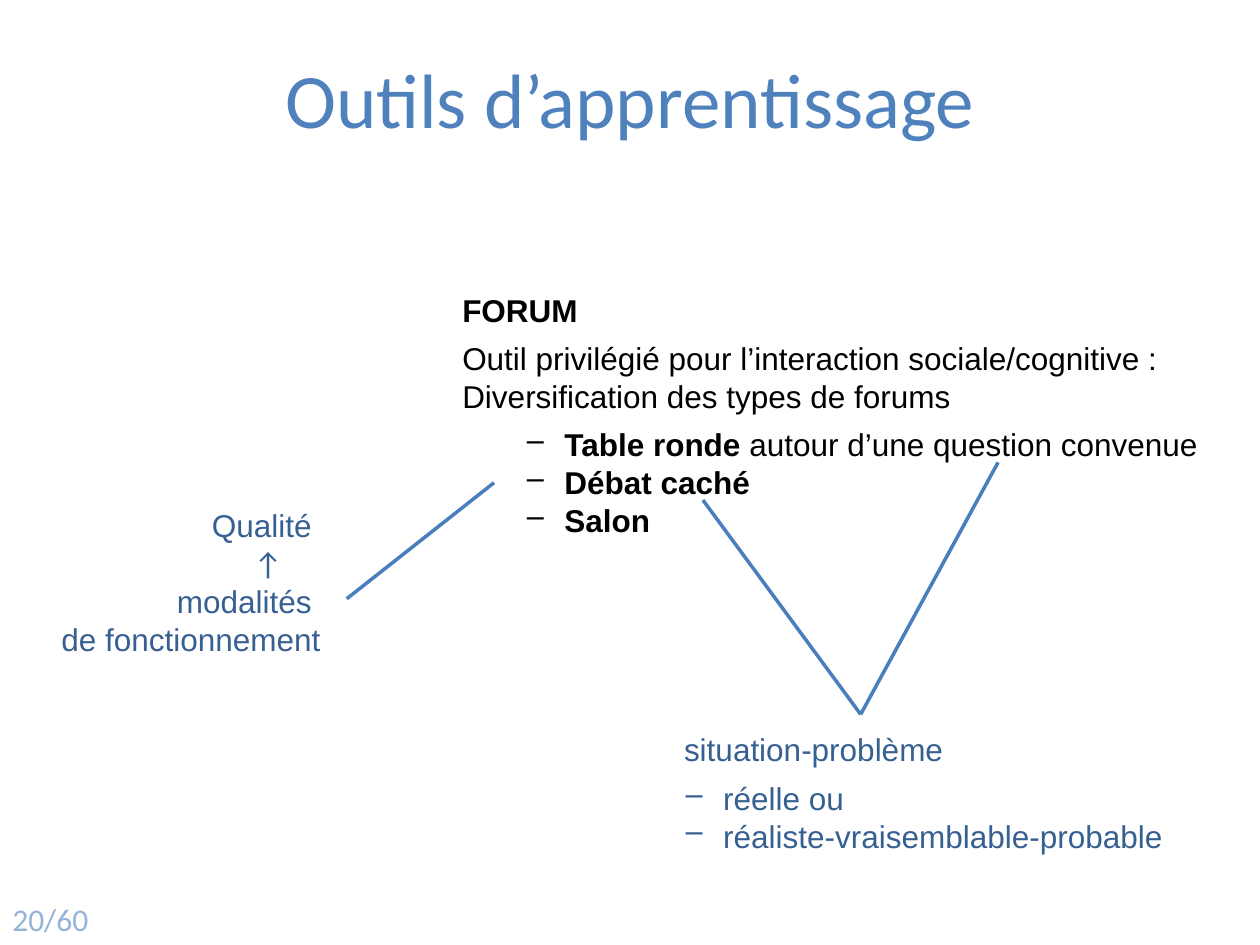
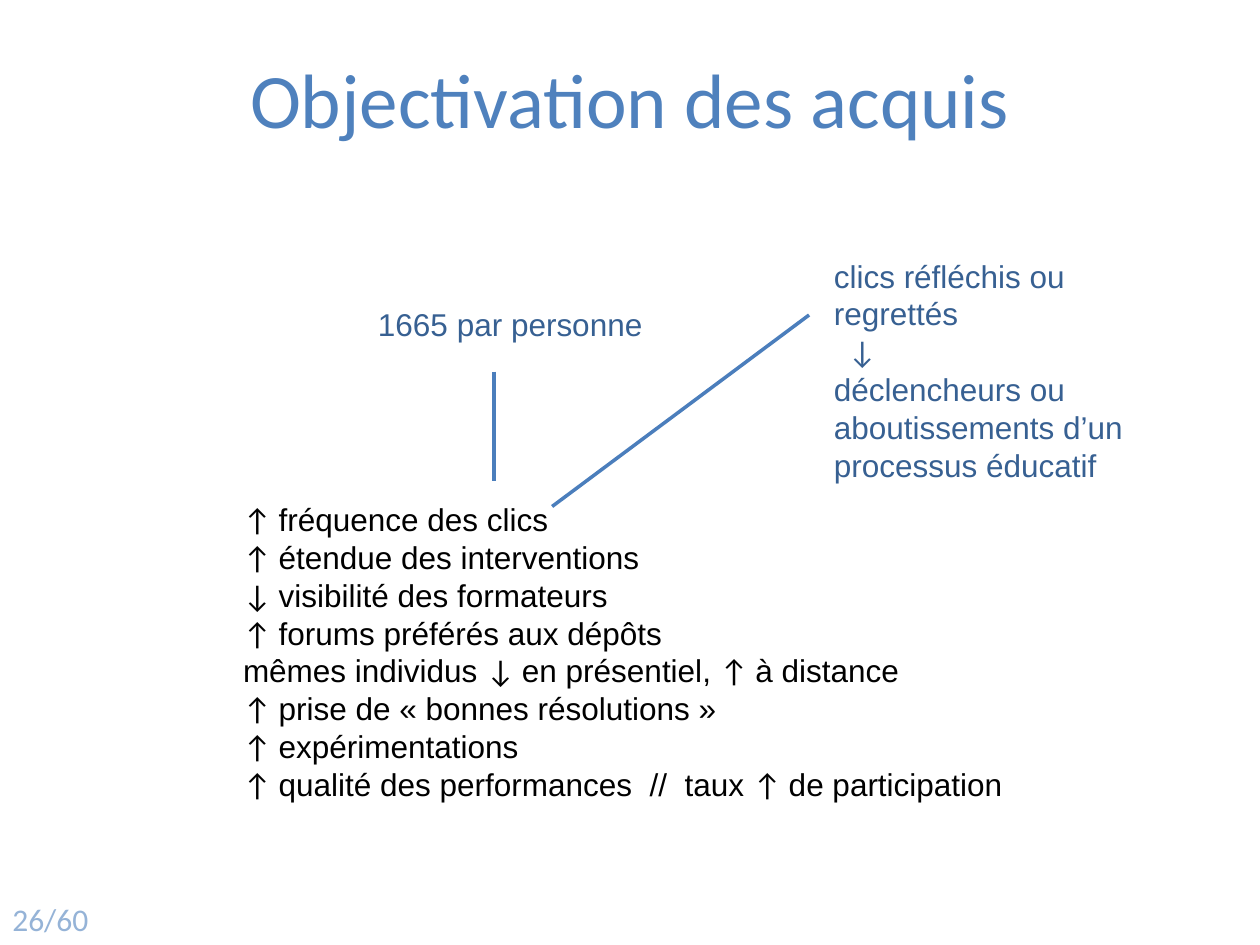
import dataclasses

import pptx
import pptx.dml.color
import pptx.enum.shapes
import pptx.enum.text
import pptx.util
from lxml import etree
from pptx.oxml import ns

Cm, Pt = pptx.util.Cm, pptx.util.Pt
ALIGN = pptx.enum.text.PP_ALIGN

TITLE_BLUE = "4F81BD"
NOTE_BLUE = "376092"
LINE_BLUE = "4B7EBC"
FOOTER_BLUE = "95B3D7"
BLACK = "000000"
WHITE = "FFFFFF"
HEADING_FONT, BODY_FONT = "Calibri", "Arial"
BODY_SIZE = 18
LINE_PITCH = 21.6
DASH_HANG = 0.79
SLIDE_TOTAL = 60


@dataclasses.dataclass
class Line:
    """One paragraph: its spans, how many of them are bold, and its layout in cm and points."""
    spans: tuple
    bold: int = 0
    after: float = 0
    indent: float = 0
    dash: bool = False
    align: ALIGN = ALIGN.LEFT


def rgb(value):
    return pptx.dml.color.RGBColor.from_string(value)


def add_box(page, place, wrap=True):
    box = page.shapes.add_textbox(*map(Cm, place))
    box.text_frame.word_wrap = wrap
    if not wrap:
        box.text_frame.auto_size = pptx.enum.text.MSO_AUTO_SIZE.SHAPE_TO_FIT_TEXT
    return box


def style(span, font, size, color, bold=False):
    span.font.name = font
    span.font.size = Pt(size)
    span.font.bold = bold
    span.font.color.rgb = rgb(color)


def lay_out(para, line):
    """Set indent, dash bullet, alignment and spacing of a paragraph."""
    properties = para._p.get_or_add_pPr()
    properties.set("marL", str(Cm(line.indent)))
    if line.dash:
        properties.set("indent", str(-Cm(DASH_HANG)))
        etree.SubElement(properties, ns.qn("a:buChar")).set("char", "‒")
    para.alignment = line.align
    para.line_spacing = Pt(LINE_PITCH)
    para.space_after = Pt(line.after)


def add_text(page, place, lines, color=NOTE_BLUE, wrap=True):
    """Add a body text box; spans that hold an arrow use the heading font."""
    frame = add_box(page, place, wrap).text_frame
    for number, line in enumerate(lines):
        para = frame.add_paragraph() if number else frame.paragraphs[0]
        lay_out(para, line)
        for position, words in enumerate(line.spans):
            span = para.add_run()
            span.text = words
            font = HEADING_FONT if "↑" in words or "↓" in words else BODY_FONT
            style(span, font, BODY_SIZE, color, position < line.bold)


def add_link(page, start, end):
    link = page.shapes.add_connector(
        pptx.enum.shapes.MSO_CONNECTOR.STRAIGHT, *map(Cm, start + end))
    link.line.color.rgb = rgb(LINE_BLUE)
    link.line.width = Pt(2)
    etree.SubElement(link._element.spPr, ns.qn("a:effectLst"))


def add_heading_text(page, place, text, size, color, align, wrap):
    box = add_box(page, place, wrap)
    para = box.text_frame.paragraphs[0]
    para.text = text
    para.alignment = align
    style(para.runs[0], HEADING_FONT, size, color)


def add_page(deck, title, number):
    """Add a blank page with the shared title and page count."""
    page = deck.slides.add_slide(deck.slide_layouts[6])
    page.background.fill.solid()
    page.background.fill.fore_color.rgb = rgb(WHITE)
    add_heading_text(page, (1.27, 0.91, 22.86, 3.17), title,
                     44, TITLE_BLUE, ALIGN.CENTER, True)
    add_heading_text(page, (0, 18.01, 2.06, 1.02), f"{number}/{SLIDE_TOTAL}",
                     18, FOOTER_BLUE, ALIGN.LEFT, False)
    return page


def add_tools_page(deck):
    page = add_page(deck, "Outils d’apprentissage", 20)
    forum_types = [("Table ronde ", "autour d’une question convenue"),
                   ("Débat caché",), ("Salon",)]
    add_text(page, (9.07, 5.74, 15.54, 5.31), [
        Line(("FORUM",), bold=1, after=6),
        Line(("Outil privilégié pour l’interaction sociale/cognitive :",)),
        Line(("Diversification des types de forums",), after=6),
        *[Line(spans, bold=1, indent=2.06, dash=True) for spans in forum_types],
    ], BLACK)
    add_text(page, (0.56, 10.08, 6.15, 3.33), [
        Line(("Qualité ",), align=ALIGN.RIGHT),
        Line(("↑",), indent=4.31),
        Line(("modalités ",), align=ALIGN.RIGHT),
        Line(("de fonctionnement",), align=ALIGN.RIGHT),
    ])
    add_text(page, (13.54, 14.6, 10.16, 2.77), [
        Line(("situation-problème",), after=6),
        *[Line((words,), indent=DASH_HANG, dash=True)
          for words in ("réelle ou", "réaliste-vraisemblable-probable")],
    ])
    problem = (17.35, 14.4)
    add_link(page, problem, (20.12, 9.32))
    add_link(page, problem, (14.17, 10.08))
    add_link(page, (6.99, 12.07), (9.96, 9.73))


def add_outcomes_page(deck):
    page = add_page(deck, "Objectivation des acquis", 26)
    outcomes = [
        ("↑ ", "fréquence des clics"),
        ("↑ ", "étendue des interventions"),
        ("↓ ", "visibilité des formateurs"),
        ("↑ ", "forums préférés aux dépôts"),
        ("mêmes individus ", "↓ ", "en présentiel, ", "↑ ", "à distance"),
        ("↑ ", "prise de « bonnes résolutions »"),
        ("↑ ", "expérimentations"),
        ("↑ ", "qualité des performances  //  taux ", "↑ ", "de participation"),
    ]
    add_text(page, (4.65, 9.96, 15.95, 6.4),
             [Line(spans) for spans in outcomes], BLACK, wrap=False)
    add_text(page, (7.37, 6.02, 5.89, 1.02),
             [Line(("1665 par personne",))], wrap=False)
    add_text(page, (16.56, 5.05, 6.35, 4.88), [
        Line(("clics réfléchis ou regrettés",)),
        Line(("↓",), indent=0.29),
        Line(("déclencheurs ou aboutissements d’un processus éducatif",)),
    ])
    add_link(page, (9.96, 7.49), (9.96, 9.7))
    add_link(page, (16.31, 6.35), (11.13, 10.21))


def main():
    deck = pptx.Presentation()
    deck.slide_width, deck.slide_height = Cm(25.4), Cm(19.05)
    add_tools_page(deck)
    add_outcomes_page(deck)
    deck.save("out.pptx")


if __name__ == "__main__":
    main()
